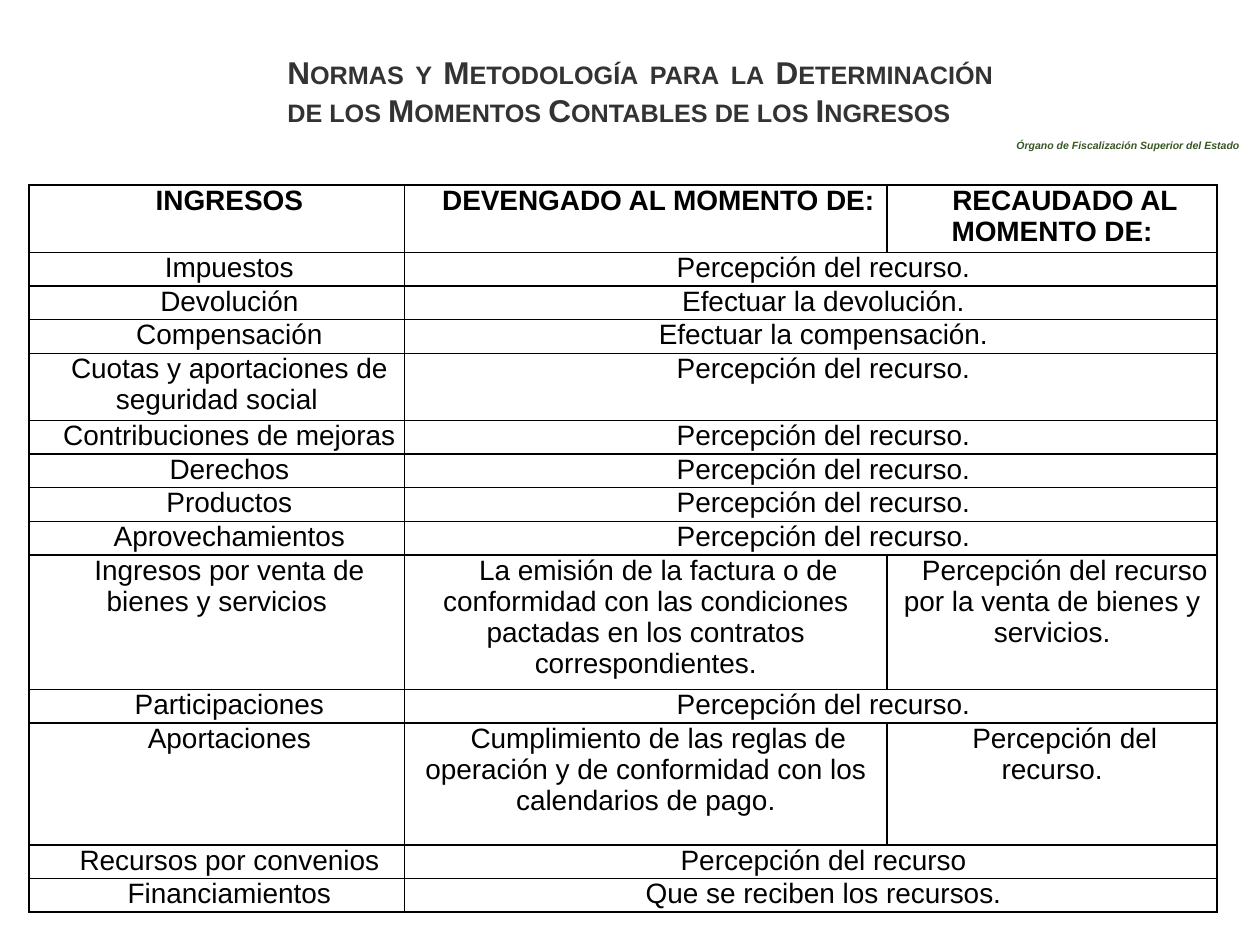
import pptx
import pptx.dml.color
import pptx.enum.text
import pptx.oxml
import pptx.oxml.ns
import pptx.util
from lxml import etree

Pt = pptx.util.Pt
ALIGN = pptx.enum.text.PP_ALIGN
ANCHOR = pptx.enum.text.MSO_ANCHOR
RECEIPT = "Percepción del recurso."
COLUMN_WIDTHS = (214.5, 275.8, 188.7)
SINGLE, DOUBLE = 19.2, 38.3
ROWS = [
    (DOUBLE, "INGRESOS", "DEVENGADO AL MOMENTO DE:", "RECAUDADO AL MOMENTO DE:"),
    (SINGLE, "Impuestos", RECEIPT),
    (SINGLE, "Devolución", "Efectuar la devolución."),
    (SINGLE, "Compensación", "Efectuar la compensación."),
    (DOUBLE, "Cuotas y aportaciones de seguridad social", RECEIPT),
    (SINGLE, "Contribuciones de mejoras", RECEIPT),
    (SINGLE, "Derechos", RECEIPT),
    (SINGLE, "Productos", RECEIPT),
    (SINGLE, "Aprovechamientos", RECEIPT),
    (76.6, "Ingresos por venta de bienes y servicios",
     "La emisión de la factura o de conformidad con las condiciones pactadas "
     "en los contratos correspondientes.",
     "Percepción del recurso por la venta de bienes y servicios."),
    (SINGLE, "Participaciones", RECEIPT),
    (69.7, "Aportaciones",
     "Cumplimiento de las reglas de operación y de conformidad con los "
     "calendarios de pago.", RECEIPT),
    (SINGLE, "Recursos por convenios", "Percepción del recurso"),
    (SINGLE, "Financiamientos", "Que se reciben los recursos."),
]


def color(value):
    """Turn a hex string into a colour."""
    return pptx.dml.color.RGBColor.from_string(value)


def format_paragraph(paragraph, size, value, bold=False, italic=False):
    """Set the font of a whole paragraph."""
    font = paragraph.font
    font.name, font.size, font.bold, font.italic = "Arial", Pt(size), bold, italic
    font.color.rgb = color(value)


def add_title(slide, left, top, width, height):
    """Place the justified small-caps title."""
    title = slide.shapes.title
    title.left, title.top, title.width, title.height = map(Pt, (left, top, width, height))
    frame = title.text_frame
    frame.word_wrap = True
    frame.auto_size = pptx.enum.text.MSO_AUTO_SIZE.NONE
    frame.vertical_anchor = ANCHOR.TOP
    paragraph = frame.paragraphs[0]
    run = paragraph.add_run()
    run.text = "Normas y Metodología para la Determinación de los Momentos Contables de los Ingresos"
    run.font._element.set("cap", "small")
    paragraph.alignment = ALIGN.JUSTIFY
    format_paragraph(paragraph, 18, "333333", bold=True)


def add_institution(slide, left, top, width, height):
    """Place the name of the institution."""
    label = slide.shapes.add_textbox(*map(Pt, (left, top, width, height)))
    label.fill.solid()
    label.fill.fore_color.rgb = color("FFFFFF")
    frame = label.text_frame
    frame.word_wrap = True
    frame.vertical_anchor = ANCHOR.MIDDLE
    frame.text = "Órgano de Fiscalización Superior del Estado"
    format_paragraph(frame.paragraphs[0], 6, "385623", bold=True, italic=True)


def format_cell(cell):
    """Give a cell its margins, black borders and empty fill."""
    cell.margin_left = cell.margin_right = Pt(3.6)
    cell.margin_top = cell.margin_bottom = 0
    properties = cell._tc.get_or_add_tcPr()
    for side in ("lnL", "lnR", "lnT", "lnB"):
        line = etree.SubElement(properties, pptx.oxml.ns.qn(f"a:{side}"), w=str(Pt(1)))
        fill = etree.SubElement(line, pptx.oxml.ns.qn("a:solidFill"))
        etree.SubElement(fill, pptx.oxml.ns.qn("a:srgbClr"), val="000000")
    cell.fill.background()


def add_income_table(slide, left, top, width, height):
    """Place the table; a row with two texts merges its last two cells."""
    frame = slide.shapes.add_table(
        len(ROWS), len(COLUMN_WIDTHS), *map(Pt, (left, top, width, height)))
    table = frame.table
    table.first_row = table.horz_banding = False
    for column, column_width in zip(table.columns, COLUMN_WIDTHS):
        column.width = Pt(column_width)
    for row_index, (row_height, *texts) in enumerate(ROWS):
        row = table.rows[row_index]
        row.height = Pt(row_height)
        for cell in row.cells:
            format_cell(cell)
        if len(texts) == 2:
            row.cells[1].merge(row.cells[2])
        for cell, text in zip(row.cells, texts):
            cell.text = text
            paragraph = cell.text_frame.paragraphs[0]
            paragraph.alignment = ALIGN.CENTER
            paragraph._p.get_or_add_pPr().set("indent", str(Pt(14.4)))
            format_paragraph(paragraph, 16, "000000", bold=row_index == 0)


def main():
    """Build and save the slide."""
    presentation = pptx.Presentation()
    presentation.slide_width, presentation.slide_height = Pt(720), Pt(540)
    slide = presentation.slides.add_slide(presentation.slide_layouts[5])
    add_institution(slide, 573.8, 75.6, 146.2, 14.4)
    add_income_table(slide, 16.6, 105.8, sum(COLUMN_WIDTHS), sum(row[0] for row in ROWS))
    add_title(slide, 157, 26.6, 417.6, 51.1)
    presentation.save("out.pptx")


if __name__ == "__main__":
    main()
